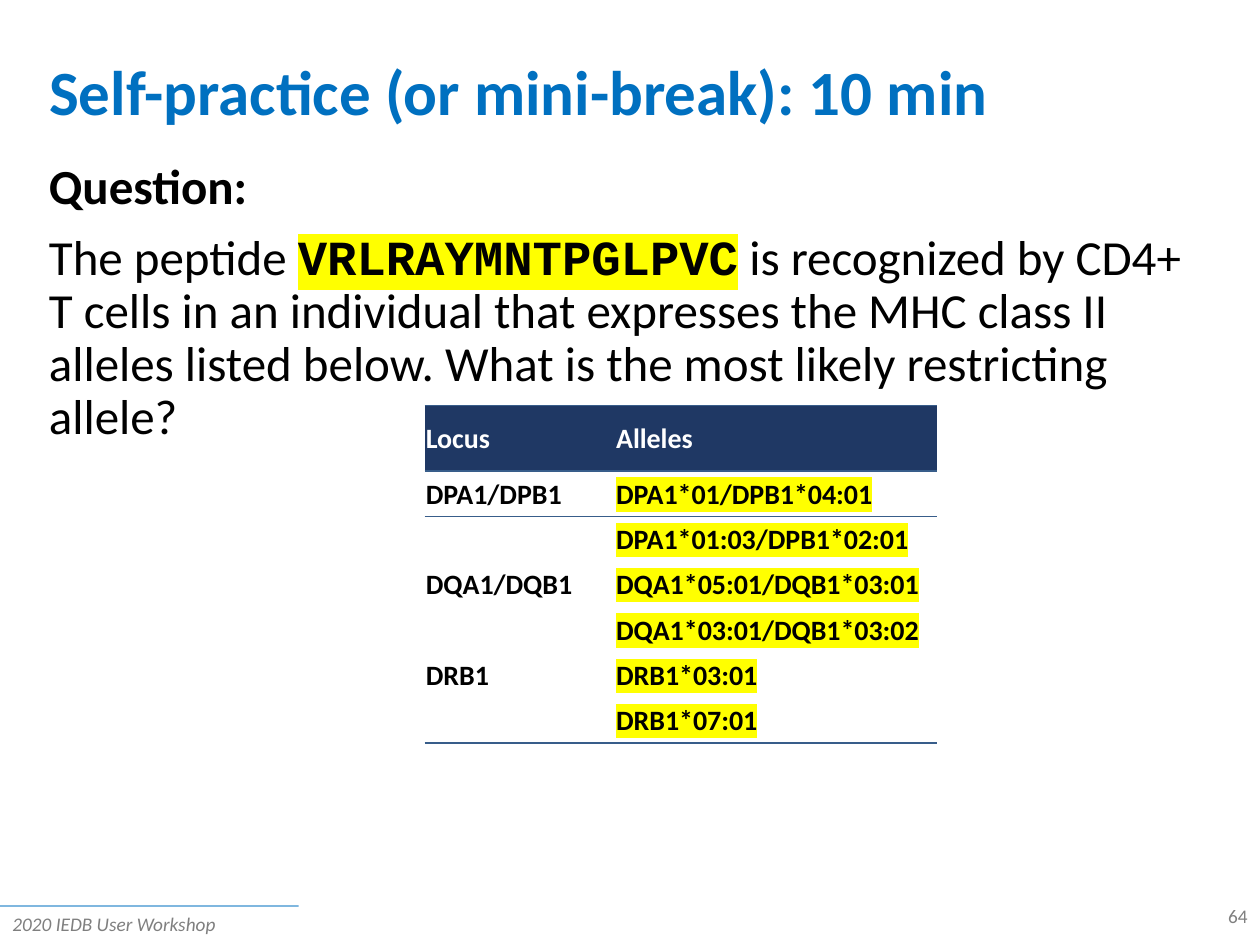
from dataclasses import dataclass
from typing import NamedTuple, Optional

from lxml.etree import SubElement
from pptx import Presentation
from pptx.dml.color import RGBColor
from pptx.enum.shapes import MSO_CONNECTOR
from pptx.enum.text import MSO_ANCHOR, MSO_AUTO_SIZE, PP_ALIGN
from pptx.oxml.ns import qn
from pptx.util import Inches, Pt


@dataclass(frozen=True)
class Theme:
    accent: str = "0070C0"
    ink: str = "000000"
    muted: str = "7F7F7F"
    paper: str = "FFFFFF"
    header: str = "1F3864"
    rule: str = "385D8A"
    marker: str = "FFFF00"
    font: str = "Calibri"
    mono: str = "Courier New"
    title: int = 36
    body: int = 28
    table: int = 16
    small: int = 11


class Run(NamedTuple):
    text: str
    size: int
    color: str
    bold: bool = False
    italic: bool = False
    font: str = "Calibri"
    highlight: Optional[str] = None


class Box(NamedTuple):
    """Left, top, width and height in percent of the slide's size."""
    left: float
    top: float
    width: float
    height: float


class Locus(NamedTuple):
    name: str
    alleles: tuple[str, ...]


T = Theme()
WIDTH, HEIGHT = Inches(10), Inches(7.5)
NO_STYLE = "{2D5ABB26-0587-4C30-8999-92F81FD0307C}"

TITLE = Box(2.9, 3.6, 94.1, 12.93)
BODY = Box(2.9, 16.53, 94.1, 76.27)
NUMBER = Box(77.5, 95.07, 22.5, 3.73)
FOOTER = Box(0, 95.87, 23.7, 3.73)
TABLE = Box(33.7, 42.93, 40.7, 35.6)
COLUMNS = (15.1, 25.6)
HEADER_ROW, ALLELE_ROW = 6.93, 4.8

LOCI = (
    Locus("DPA1/DPB1", ("DPA1*01/DPB1*04:01", "DPA1*01:03/DPB1*02:01")),
    Locus("DQA1/DQB1", ("DQA1*05:01/DQB1*03:01", "DQA1*03:01/DQB1*03:02")),
    Locus("DRB1", ("DRB1*03:01", "DRB1*07:01")),
)


def across(percent: float) -> int:
    return round(WIDTH * percent / 100)


def down(percent: float) -> int:
    return round(HEIGHT * percent / 100)


def place(box: Box) -> tuple[int, int, int, int]:
    return across(box.left), down(box.top), across(box.width), down(box.height)


def add_run(p, run: Run) -> None:
    r = p.add_run()
    r.text = run.text
    r.font.size, r.font.bold, r.font.italic = Pt(run.size), run.bold, run.italic
    r.font.color.rgb = RGBColor.from_string(run.color)
    r.font.name = run.font
    if run.highlight:
        props = r.font._element
        mark = SubElement(props, qn("a:highlight"))
        SubElement(mark, qn("a:srgbClr"), val=run.highlight)
        props.find(qn("a:latin")).addprevious(mark)


def add_text(s, box: Box, *paragraphs: list[Run], align=PP_ALIGN.LEFT,
             line_spacing: float = 1.0) -> None:
    tf = s.shapes.add_textbox(*place(box)).text_frame
    tf.word_wrap = True
    for i, runs in enumerate(paragraphs):
        p = tf.add_paragraph() if i else tf.paragraphs[0]
        p.alignment, p.line_spacing = align, line_spacing
        p.space_before = Pt(10 if i else 0)
        for run in runs:
            add_run(p, run)


def set_title(s, run: Run) -> None:
    sp = s.shapes.title
    sp.left, sp.top, sp.width, sp.height = place(TITLE)
    tf = sp.text_frame
    tf.word_wrap, tf.auto_size = True, MSO_AUTO_SIZE.NONE
    tf.vertical_anchor = MSO_ANCHOR.MIDDLE
    p = tf.paragraphs[0]
    p.alignment, p.line_spacing = PP_ALIGN.LEFT, 0.9
    add_run(p, run)


def add_footer_rule(s) -> None:
    y = down(FOOTER.top)
    line = s.shapes.add_connector(MSO_CONNECTOR.STRAIGHT, 0, y, across(FOOTER.width), y)
    line.line.width = Pt(1)
    line.line.color.rgb = RGBColor.from_string(T.accent)
    color = line.line._ln.find(qn("a:solidFill")).find(qn("a:srgbClr"))
    SubElement(color, qn("a:alpha"), val="50000")
    SubElement(line._element.spPr, qn("a:effectLst"))


def format_cell(cell, fill: str, borders: tuple[str, ...]) -> None:
    cell.margin_left = cell.margin_right = cell.margin_top = Inches(0.01)
    cell.margin_bottom = 0
    cell.vertical_anchor = MSO_ANCHOR.MIDDLE
    cell.fill.solid()
    cell.fill.fore_color.rgb = RGBColor.from_string(fill)
    props = cell._tc.get_or_add_tcPr()
    for i, side in enumerate(borders):
        ln = SubElement(props, qn(f"a:{side}"), w=str(Pt(1)))
        SubElement(SubElement(ln, qn("a:solidFill")), qn("a:srgbClr"), val=T.rule)
        props.insert(i, ln)


def add_allele_table(s) -> None:
    rows = [("Locus", "Alleles")]
    for locus in LOCI:
        rows += [("" if i else locus.name, allele)
                 for i, allele in enumerate(locus.alleles)]
    table = s.shapes.add_table(len(rows), len(COLUMNS), *place(TABLE)).table
    table._tbl.tblPr.find(qn("a:tableStyleId")).text = NO_STYLE
    table.horz_banding = False
    for column, width in zip(table.columns, COLUMNS):
        column.width = across(width)

    for i, texts in enumerate(rows):
        is_header = i == 0
        table.rows[i].height = down(HEADER_ROW if is_header else ALLELE_ROW)
        borders = {0: ("lnT", "lnB"), 1: ("lnT",), len(rows) - 1: ("lnB",)}.get(i, ())
        for j, text in enumerate(texts):
            cell = table.cell(i, j)
            format_cell(cell, T.header if is_header else T.paper, borders)
            p = cell.text_frame.paragraphs[0]
            if text:
                add_run(p, Run(text, T.table, T.paper if is_header else T.ink, bold=True,
                               highlight=T.marker if j and not is_header else None))
            else:
                p.font.size = Pt(T.table)


def main() -> None:
    prs = Presentation()
    prs.slide_width, prs.slide_height = WIDTH, HEIGHT
    s = prs.slides.add_slide(prs.slide_layouts[5])

    # Title and question
    set_title(s, Run("Self-practice (or mini-break): 10 min", T.title, T.accent, bold=True))
    add_text(
        s, BODY,
        [Run("Question:", T.body, T.ink, bold=True)],
        [Run("The peptide ", T.body, T.ink),
         Run("VRLRAYMNTPGLPVC", T.body, T.ink, bold=True, font=T.mono, highlight=T.marker),
         Run(" is recognized by CD4+ T cells in an individual that expresses the MHC "
             "class II alleles listed below. What is the most likely restricting allele?",
             T.body, T.ink)],
        line_spacing=0.9)

    # Footer
    add_footer_rule(s)
    add_text(s, NUMBER, [Run("64", T.small, T.muted)], align=PP_ALIGN.RIGHT)
    add_text(s, FOOTER, [Run("2020 IEDB User Workshop", T.small, T.muted, italic=True)])

    # Alleles by locus
    add_allele_table(s)
    prs.save("out.pptx")


if __name__ == "__main__":
    main()
